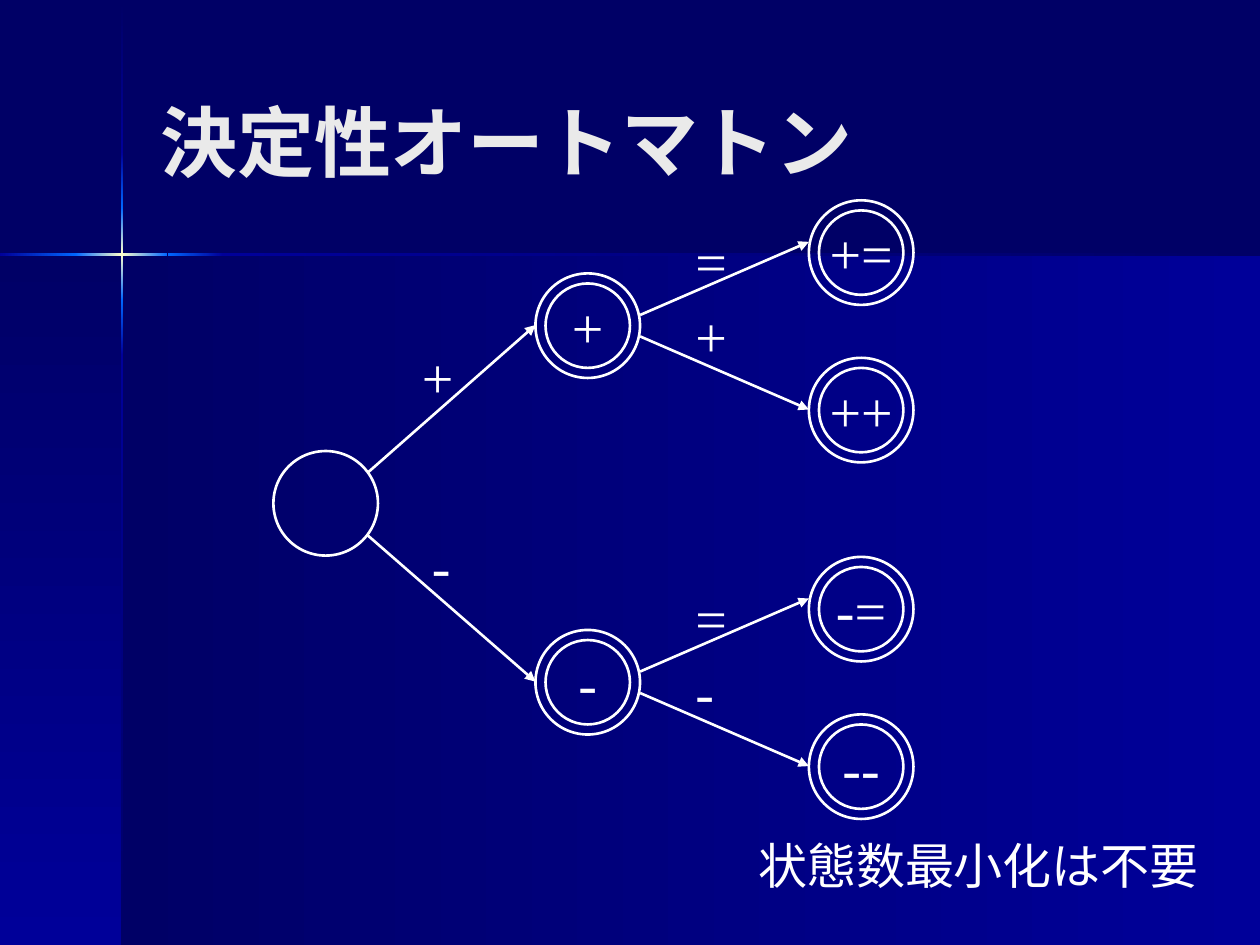
from dataclasses import dataclass

from lxml.etree import SubElement
from pptx import Presentation
from pptx.dml.color import RGBColor
from pptx.enum.shapes import MSO_CONNECTOR, MSO_SHAPE
from pptx.enum.text import MSO_ANCHOR, MSO_AUTO_SIZE, PP_ALIGN
from pptx.oxml.ns import qn
from pptx.util import Inches, Pt

COLORS = {"navy": "000066", "blue": "000099", "bright": "0066FF",
          "glow": "FFFFCC", "white": "FFFFFF", "title": "EAEAEA"}
FONT = "Times New Roman"
OUTER, RING_GAP = 0.83, 0.08
ACROSS, DOWN = 0, 90


@dataclass
class Band:
    left: float
    top: float
    width: float
    height: float
    stops: tuple
    angle: int


@dataclass
class Branch:
    sign: str
    top: float
    root_y: float
    label_at: tuple


# Background panels, then the pieces of the glowing cross
BANDS = [
    Band(0.97, 2.02, 9.03, 5.48, ("navy", "blue"), ACROSS),
    Band(0, 2.02, 0.97, 5.48, ("navy", "blue"), DOWN),
    Band(0.96, 0.01, 0.02, 1.21, ("navy", "blue"), DOWN),
    Band(0.96, 2.82, 0.02, 4.68, ("blue", "navy"), DOWN),
    Band(1.77, 2.01, 8.23, 0.02, ("blue", "navy"), ACROSS),
    Band(0.96, 2.38, 0.02, 0.44, ("bright", "blue"), DOWN),
    Band(0.96, 1.21, 0.02, 0.44, ("blue", "bright"), DOWN),
    Band(0.96, 1.65, 0.02, 0.73, ("bright", "glow", "bright"), DOWN),
    Band(0, 2.01, 0.61, 0.02, ("blue", "bright"), ACROSS),
    Band(1.33, 2.01, 0.44, 0.02, ("bright", "blue"), ACROSS),
    Band(0.6, 2.01, 0.73, 0.02, ("bright", "glow", "bright"), ACROSS),
]
BRANCHES = [Branch("+", 2.17, 3.75, (3.25, 2.67)),
            Branch("-", 5.0, 4.25, (3.33, 4.17))]


def rgb(name: str) -> RGBColor:
    return RGBColor.from_string(COLORS[name])


def write(tf, text: str, size: int, color: str = "white",
          align=PP_ALIGN.LEFT, bold: bool = False, **frame) -> None:
    for name, value in frame.items():
        setattr(tf, name, value)
    p = tf.paragraphs[0]
    p.alignment = align
    r = p.add_run()
    r.text = text
    for name, value in {"name": FONT, "size": Pt(size), "bold": bold}.items():
        setattr(r.font, name, value)
    r.font.color.rgb = rgb(color)


def add_band(s, band: Band) -> None:
    sp = s.shapes.add_shape(
        MSO_SHAPE.RECTANGLE, Inches(band.left), Inches(band.top),
        Inches(band.width), Inches(band.height))
    sp.shadow.inherit = False
    sp.line.fill.background()
    sp.fill.gradient()
    sp.fill.gradient_angle = -band.angle % 360
    stops = sp._element.spPr.find(".//" + qn("a:gsLst"))
    for stop in list(stops):
        stops.remove(stop)
    for i, name in enumerate(band.stops):
        pos = 100000 * i // (len(band.stops) - 1)
        gs = SubElement(stops, qn("a:gs"), pos=str(pos))
        SubElement(gs, qn("a:srgbClr"), val=COLORS[name])


def add_circle(s, x: float, y: float, size: float):
    sp = s.shapes.add_shape(MSO_SHAPE.OVAL, Inches(x), Inches(y),
                            Inches(size), Inches(size))
    sp.shadow.inherit = False
    sp.fill.background()
    sp.line.color.rgb = rgb("white")
    sp.line.width = Pt(1.5)
    return sp


def add_accepting(s, x: float, y: float, label: str) -> None:
    sp = add_circle(s, x, y, OUTER)
    write(sp.text_frame, label, 32, align=PP_ALIGN.CENTER,
          word_wrap=False, vertical_anchor=MSO_ANCHOR.MIDDLE)
    add_circle(s, x + RING_GAP, y + RING_GAP, OUTER - 2 * RING_GAP)


def add_arrow(s, x1: float, y1: float, x2: float, y2: float) -> None:
    line = s.shapes.add_connector(MSO_CONNECTOR.STRAIGHT, Inches(x1),
                                  Inches(y1), Inches(x2), Inches(y2))
    line.line.color.rgb = rgb("white")
    line.line.width = Pt(1.5)
    SubElement(line.line._get_or_add_ln(), qn("a:tailEnd"), type="triangle")
    SubElement(line._element.spPr, qn("a:effectLst"))


def add_text(s, x: float, y: float, w: float, h: float,
             text: str, size: int) -> None:
    box = s.shapes.add_textbox(Inches(x), Inches(y), Inches(w), Inches(h))
    write(box.text_frame, text, size, word_wrap=False,
          auto_size=MSO_AUTO_SIZE.SHAPE_TO_FIT_TEXT)


def add_symbol(s, x: float, y: float, symbol: str) -> None:
    add_text(s, x, y, 0.35 if symbol == "-" else 0.45, 0.63, symbol, 32)


def add_branch(s, b: Branch) -> None:
    # Root to the one-character state
    add_arrow(s, 2.92, b.root_y, 4.25, b.top + 0.41)
    add_symbol(s, *b.label_at, b.sign)
    add_accepting(s, 4.25, b.top, b.sign)
    # One-character state to the two-character states:
    # symbol, symbol offset, arrow start, arrow end, state offset
    for symbol, text_dy, start_dy, end_dy, state_dy in (
            ("=", -0.42, 0.33, -0.25, -0.58),
            (b.sign, 0.17, 0.5, 1.08, 0.67)):
        add_arrow(s, 5.08, b.top + start_dy, 6.42, b.top + end_dy)
        add_symbol(s, 5.42, b.top + text_dy, symbol)
        add_accepting(s, 6.42, b.top + state_dy, b.sign + symbol)


def main() -> None:
    prs = Presentation()
    prs.slide_width, prs.slide_height = Inches(10), Inches(7.5)
    s = prs.slides.add_slide(prs.slide_layouts[5])
    s.background.fill.solid()
    s.background.fill.fore_color.rgb = rgb("navy")
    for band in BANDS:
        add_band(s, band)

    # Title
    title = s.shapes.title
    for name, value in {"left": 1.17, "top": 0.33,
                        "width": 8.25, "height": 1.57}.items():
        setattr(title, name, Inches(value))
    write(title.text_frame, "決定性オートマトン", 44, "title", bold=True,
          vertical_anchor=MSO_ANCHOR.MIDDLE)

    # Automaton
    add_circle(s, 2.17, 3.58, OUTER)
    for branch in BRANCHES:
        add_branch(s, branch)

    # Closing remark
    add_text(s, 5.92, 6.58, 3.7, 0.57, "状態数最小化は不要", 28)
    prs.save("out.pptx")


if __name__ == "__main__":
    main()
